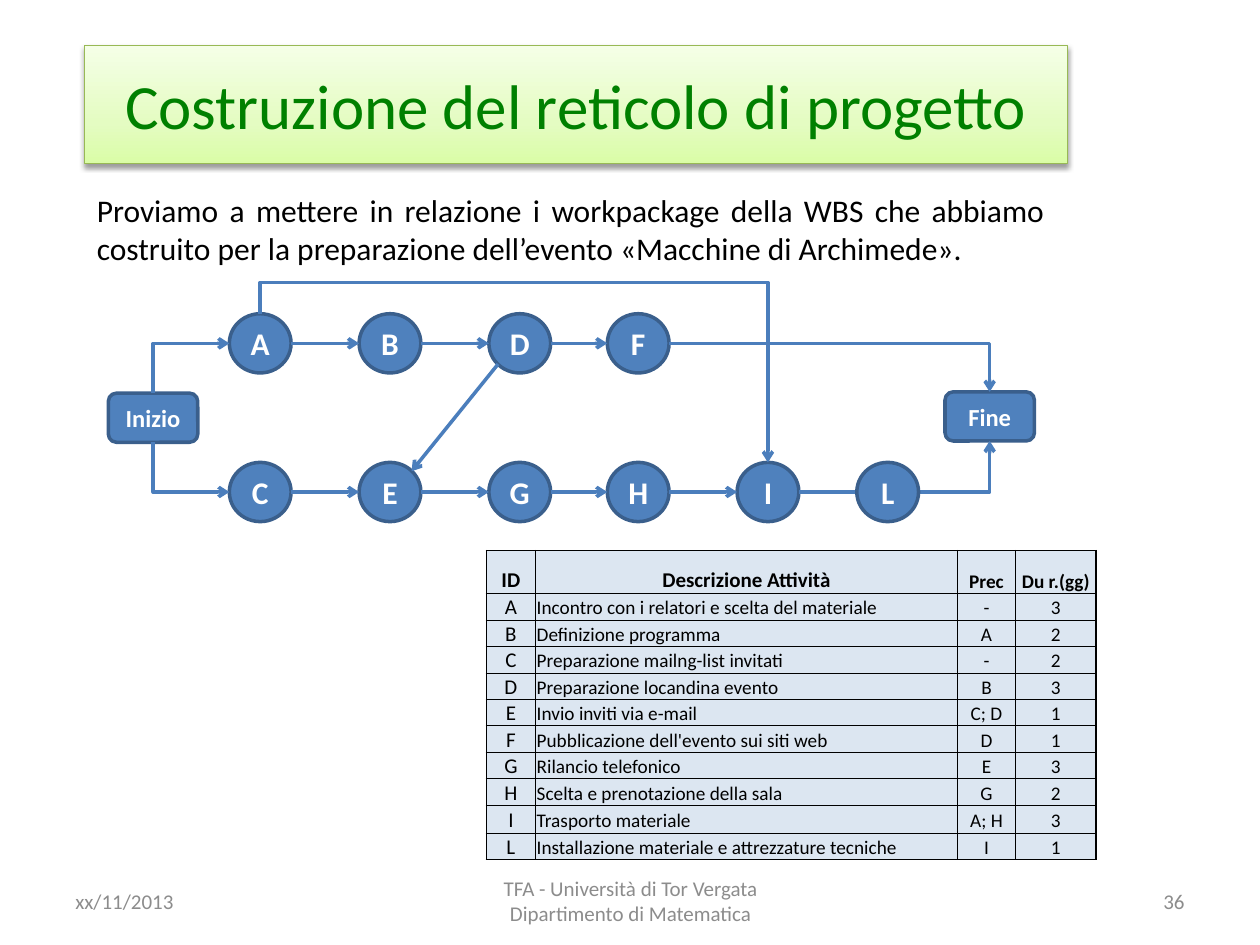
from copy import deepcopy
from dataclasses import dataclass

from lxml import etree
from pptx import Presentation
from pptx import util as u
from pptx.dml.color import RGBColor
from pptx.enum import shapes, text
from pptx.oxml.ns import qn

COLORS = {
    "title": "008000", "title_line": "98B955", "black": "000000", "white": "FFFFFF",
    "footer": "8C8C8C", "node": "4F81BD", "node_line": "3A5F8C", "arrow": "4B7EBC",
    "cell": "DCE6F1",
}
TITLE_GRADIENT = [(0, "DAFDA7"), (0.35, "E4FCC2"), (1, "F5FFE7")]
ALIGN = text.PP_ALIGN
ANCHOR = text.MSO_ANCHOR
COLUMN_LEFTS = (1.82, 2.85, 3.88, 4.82, 5.85, 6.8)
ROW_TOPS = (2.49, 3.67)
CIRCLE = (0.49, 0.47)
TERMINAL = (0.71, 0.39)
ACTIVITIES = [
    ("ID", "Descrizione Attività", "Prec", "Du r.(gg)"),
    ("A", "Incontro con i relatori e scelta del materiale", "-", "3"),
    ("B", "Definizione programma", "A", "2"),
    ("C", "Preparazione mailng-list invitati", "-", "2"),
    ("D", "Preparazione locandina evento", "B", "3"),
    ("E", "Invio inviti via e-mail", "C; D", "1"),
    ("F", "Pubblicazione dell'evento sui siti web", "D", "1"),
    ("G", "Rilancio telefonico", "E", "3"),
    ("H", "Scelta e prenotazione della sala", "G", "2"),
    ("I", "Trasporto materiale", "A; H", "3"),
    ("L", "Installazione materiale e attrezzature tecniche", "I", "1"),
]
TABLE_COLUMNS = (0.39, 3.35, 0.46, 0.64)
TABLE_ROWS = (0.34, *[0.19] * 8, 0.22, 0.16)


@dataclass
class Node:
    label: str
    left: float
    top: float
    size: tuple
    preset: shapes.MSO_SHAPE = shapes.MSO_SHAPE.OVAL
    font_size: int = 18

    def side(self, across: float, down: float) -> tuple:
        return self.left + across * self.size[0], self.top + down * self.size[1]


def rgb(name: str) -> RGBColor:
    return RGBColor.from_string(COLORS[name])


def write(frame, content: str, *, size: float, color: str = "black", bold: bool = False,
          align=ALIGN.LEFT, anchor=ANCHOR.MIDDLE) -> None:
    frame.word_wrap = True
    frame.vertical_anchor = anchor
    paragraph = frame.paragraphs[0]
    paragraph.text = content
    paragraph.alignment = align
    for run in paragraph.runs:
        run.font.name = "Calibri"
        run.font.size = u.Pt(size)
        run.font.bold = bold
        run.font.color.rgb = rgb(color)


def add_text(slide, box: tuple, content: str, **style) -> None:
    shape = slide.shapes.add_textbox(*map(u.Inches, box))
    write(shape.text_frame, content, **style)


def format_title(shape) -> None:
    shape.left, shape.top, shape.width, shape.height = map(u.Inches, (0.67, 0.36, 7.8, 0.94))
    write(shape.text_frame, "Costruzione del reticolo di progetto", size=36,
          color="title", align=ALIGN.CENTER)
    shape.fill.gradient()
    shape.fill.gradient_angle = 90
    properties = shape._element.spPr
    stop_list = properties.find(".//" + qn("a:gsLst"))
    stop_list.insert(1, deepcopy(stop_list[0]))
    for stop, (position, color) in zip(shape.fill.gradient_stops, TITLE_GRADIENT):
        stop.position = position
        stop.color.rgb = RGBColor.from_string(color)
    shape.line.color.rgb = rgb("title_line")
    shape.line.width = u.Pt(0.75)
    effects = etree.SubElement(properties, qn("a:effectLst"))
    shadow = etree.SubElement(effects, qn("a:outerShdw"), blurRad="40000", dist="20000",
                              dir="5400000", rotWithShape="0")
    color = etree.SubElement(shadow, qn("a:srgbClr"), val=COLORS["black"])
    etree.SubElement(color, qn("a:alpha"), val="38000")


def add_node(slide, node: Node) -> None:
    shape = slide.shapes.add_shape(node.preset, *map(u.Inches, (node.left, node.top, *node.size)))
    shape.shadow.inherit = False
    shape.fill.solid()
    shape.fill.fore_color.rgb = rgb("node")
    shape.line.color.rgb = rgb("node_line")
    shape.line.width = u.Pt(2)
    frame = shape.text_frame
    frame.margin_left = frame.margin_right = frame.margin_top = frame.margin_bottom = 0
    write(frame, node.label, size=node.font_size, color="white", bold=True, align=ALIGN.CENTER)


def add_arrow(slide, start: tuple, end: tuple, kind=shapes.MSO_CONNECTOR.STRAIGHT):
    connector = slide.shapes.add_connector(kind, *map(u.Inches, (*start, *end)))
    connector.line.color.rgb = rgb("arrow")
    connector.line.width = u.Pt(2)
    properties = connector._element.spPr
    etree.SubElement(properties.find(qn("a:ln")), qn("a:tailEnd"), type="arrow")
    etree.SubElement(properties, qn("a:effectLst"))
    return connector


def add_elbow(slide, start: tuple, end: tuple, *, vertical_first: bool = False,
              bend: float | None = None) -> None:
    down = end[1] > start[1]
    if vertical_first:
        middle_x, middle_y = (start[0] + end[0]) / 2, (start[1] + end[1]) / 2
        half_width = abs(end[1] - start[1]) / 2
        half_height = (end[0] - start[0]) / 2 * (-1 if down else 1)
        start = middle_x + half_width, middle_y + half_height
        end = middle_x - half_width, middle_y - half_height
    connector = add_arrow(slide, start, end, shapes.MSO_CONNECTOR.ELBOW)
    properties = connector._element.spPr
    if vertical_first:
        properties.find(qn("a:xfrm")).set("rot", str((270 if down else 90) * 60000))
    geometry = properties.find(qn("a:prstGeom"))
    if bend is None:
        geometry.set("prst", "bentConnector2")
    else:
        adjustments = geometry.find(qn("a:avLst"))
        etree.SubElement(adjustments, qn("a:gd"), name="adj1", fmla=f"val {round(bend * 100000)}")


def add_borders(cell, widths: dict) -> None:
    properties = cell._tc.get_or_add_tcPr()
    for index, (side, width) in enumerate(widths.items()):
        line = etree.Element(qn(f"a:ln{side}"), w=str(u.Pt(width)))
        fill = etree.SubElement(line, qn("a:solidFill"))
        etree.SubElement(fill, qn("a:srgbClr"), val=COLORS["black"])
        properties.insert(index, line)


def add_activity_table(slide) -> None:
    rows, columns = len(TABLE_ROWS), len(TABLE_COLUMNS)
    box = (3.86, 4.37, sum(TABLE_COLUMNS), sum(TABLE_ROWS))
    table = slide.shapes.add_table(rows, columns, *map(u.Inches, box)).table
    table.first_row = table.horz_banding = False
    for column, width in zip(table.columns, TABLE_COLUMNS):
        column.width = u.Inches(width)
    for r, values in enumerate(ACTIVITIES):
        table.rows[r].height = u.Inches(TABLE_ROWS[r])
        for c, value in enumerate(values):
            cell = table.cell(r, c)
            cell.margin_left = cell.margin_right = cell.margin_top = u.Inches(0.01)
            cell.margin_bottom = 0
            cell.vertical_anchor = ANCHOR.BOTTOM
            cell.fill.solid()
            cell.fill.fore_color.rgb = rgb("cell")
            write(cell.text_frame, value, bold=r == 0,
                  size=12 if c == 0 or (r, c) == (0, 1) else 11,
                  align=ALIGN.LEFT if c == 1 and r else ALIGN.CENTER, anchor=ANCHOR.TOP)
            add_borders(cell, {"L": 1 if c == 0 else 0.5, "R": 1 if c == columns - 1 else 0.5,
                               "T": 1 if r == 0 else 0.5, "B": 0.5})


def add_network(slide) -> None:
    nodes = {label: Node(label, left, top, CIRCLE)
             for top, labels in zip(ROW_TOPS, ("ABDF", "CEGHIL"))
             for label, left in zip(labels, COLUMN_LEFTS)}
    for label, left, top in (("Inizio", 0.86, 3.12), ("Fine", 7.5, 3.11)):
        nodes[label] = Node(label, left, top, TERMINAL, shapes.MSO_SHAPE.ROUNDED_RECTANGLE, 14)
    for label, node in nodes.items():
        if label != "L":
            add_node(slide, node)
    for first, second in ("AB", "CE", "EG", "BD", "GH", "DF", "HI"):
        add_arrow(slide, nodes[first].side(1, 0.5), nodes[second].side(0, 0.5))
    add_arrow(slide, nodes["D"].side(0.15, 0.85), nodes["E"].side(0.85, 0.15))
    begin, finish = nodes["Inizio"], nodes["Fine"]
    add_elbow(slide, nodes["F"].side(1, 0.5), finish.side(0.5, 0))
    add_elbow(slide, nodes["I"].side(1, 0.5), finish.side(0.5, 1))
    add_elbow(slide, begin.side(0.5, 0), nodes["A"].side(0, 0.5), vertical_first=True)
    add_elbow(slide, begin.side(0.5, 1), nodes["C"].side(0, 0.5), vertical_first=True)
    add_node(slide, nodes["L"])
    add_elbow(slide, nodes["A"].side(0.5, 0), nodes["I"].side(0.5, 0),
              vertical_first=True, bend=-0.21)


def main() -> None:
    presentation = Presentation()
    presentation.slide_width, presentation.slide_height = u.Inches(10), u.Inches(7.5)
    slide = presentation.slides.add_slide(presentation.slide_layouts[5])
    format_title(slide.shapes.title)
    for left, width, content, align in (
            (0.5, 2.33, "xx/11/2013", ALIGN.LEFT),
            (3.42, 3.17, "TFA - Università di Tor Vergata\vDipartimento di Matematica", ALIGN.CENTER),
            (7.17, 2.33, "36", ALIGN.RIGHT)):
        add_text(slide, (left, 6.95, width, 0.4), content, size=12, color="footer", align=align)
    add_text(slide, (0.67, 1.47, 7.72, 0.79),
             "Proviamo a mettere in relazione i workpackage della WBS che abbiamo costruito "
             "per la preparazione dell’evento «Macchine di Archimede».",
             size=18, align=ALIGN.JUSTIFY, anchor=ANCHOR.TOP)
    add_activity_table(slide)
    add_network(slide)
    presentation.save("out.pptx")


if __name__ == "__main__":
    main()
